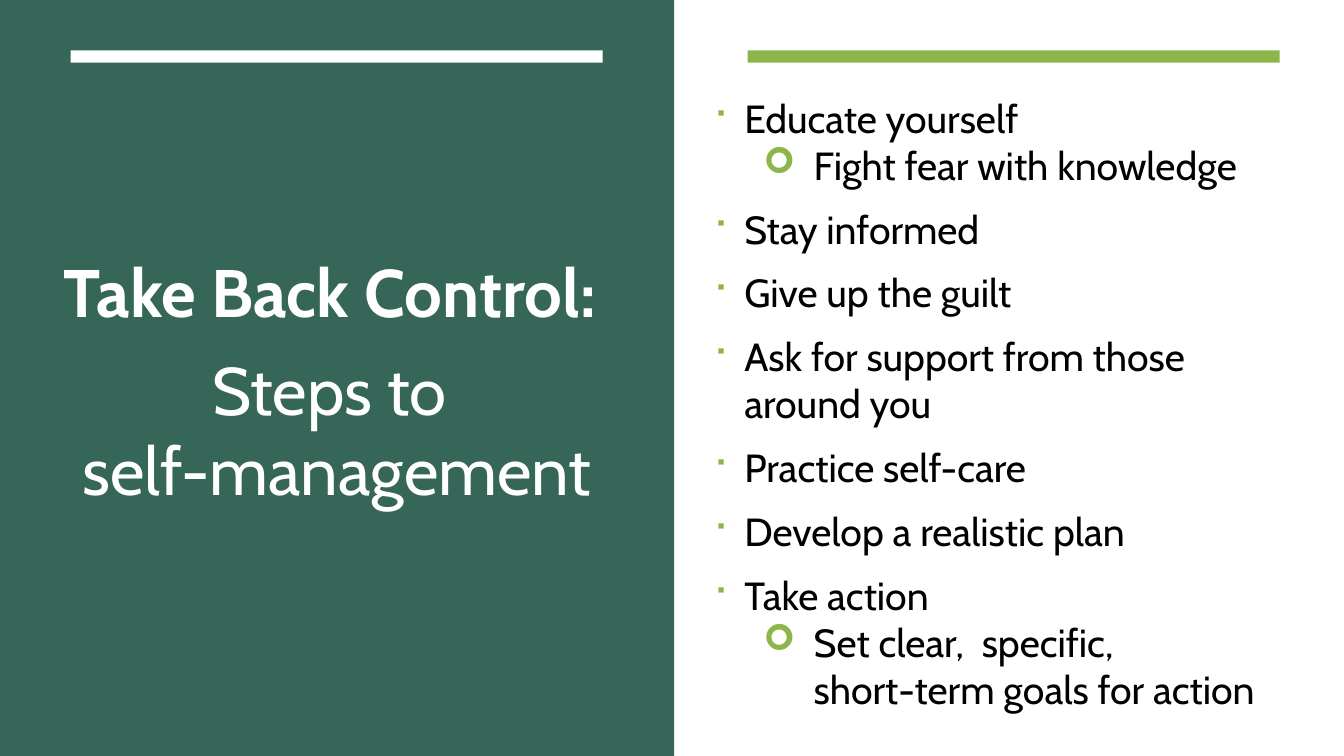
from lxml import etree
from pptx import Presentation
from pptx.dml.color import RGBColor
from pptx.enum import shapes, text
from pptx.oxml import ns
from pptx.util import Pt

WHITE = RGBColor(0xFF, 0xFF, 0xFF)
BLACK = RGBColor(0x00, 0x00, 0x00)
PINE = RGBColor(0x36, 0x66, 0x58)
LEAF = RGBColor(0x8C, 0xB6, 0x4A)

WIDTH, HEIGHT = 960, 540
PANEL_WIDTH = 481.5
BAR_TOP, BAR_WIDTH, BAR_HEIGHT = 36, 380, 8.8

HEADING = [("Take Back Control: ", True, 12), ("Steps to ", False, 0), ("self-management", False, 0)]

# Each step: its text and the sub-points below it
STEPS = [
    ("Educate yourself", ["Fight fear with knowledge"]),
    ("Stay informed", []),
    ("Give up the guilt", []),
    ("Ask for support from those\naround you", []),
    ("Practice self-care", []),
    ("Develop a realistic plan", []),
    ("Take action", ["Set clear,  specific,\nshort-term goals for action"]),
]


class SlideBuilder:
    """Holds the text style and the slide being filled."""

    font = "Cabin"
    # Per list level: bullet, left margin and hanging indent
    bullets = [("■", 22.5, 22.5), ("➢", 72, 36)]

    def __init__(self, slide):
        self.slide = slide
        self.heading = slide.shapes.title
        self.body = slide.placeholders[1]

    def block(self, left, top, width, height, color):
        """Add a plain rectangle behind the placeholders."""
        block = self.slide.shapes.add_shape(
            shapes.MSO_SHAPE.RECTANGLE, Pt(left), Pt(top), Pt(width), Pt(height))
        block.shadow.inherit = False
        block.fill.solid()
        block.fill.fore_color.rgb = color
        block.line.fill.background()
        self.heading._element.addprevious(block._element)

    def place(self, placeholder, left, top, width, height):
        placeholder.left, placeholder.top = Pt(left), Pt(top)
        placeholder.width, placeholder.height = Pt(width), Pt(height)
        frame = placeholder.text_frame
        frame.word_wrap = True
        frame.auto_size = text.MSO_AUTO_SIZE.NONE
        frame.vertical_anchor = text.MSO_ANCHOR.MIDDLE
        return frame

    def set_words(self, paragraph, words, size, color, align, after, bold=False):
        paragraph.text = words
        paragraph.alignment = align
        paragraph.space_before = Pt(0)
        paragraph.space_after = Pt(after)
        for run in paragraph.runs:
            run.font.name = self.font
            run.font.size = Pt(size)
            run.font.bold = bold
            run.font.color.rgb = color

    def bullet(self, paragraph, level):
        char, margin, hang = self.bullets[level]
        paragraph.level = level
        props = paragraph._p.get_or_add_pPr()
        props.set("marL", str(Pt(margin)))
        props.set("indent", str(-Pt(hang)))
        color = etree.SubElement(props, ns.qn("a:buClr"))
        etree.SubElement(color, ns.qn("a:srgbClr"), val=str(LEAF))
        etree.SubElement(props, ns.qn("a:buSzPct"), val="92000")
        etree.SubElement(props, ns.qn("a:buFont"), typeface="Wingdings")
        etree.SubElement(props, ns.qn("a:buChar"), char=char)

    def title(self, lines, *box):
        frame = self.place(self.heading, *box)
        frame.text = "\n".join(words for words, _, _ in lines)
        for paragraph, (words, bold, after) in zip(frame.paragraphs, lines):
            self.set_words(paragraph, words, 48, WHITE, text.PP_ALIGN.CENTER, after, bold)

    def steps(self, steps, *box):
        frame = self.place(self.body, *box)
        items = []
        for step, points in steps:
            items.append((step, 0, 0 if points else 12))
            items += [(point, 1, 12) for point in points]
        for index, (words, level, after) in enumerate(items):
            paragraph = frame.add_paragraph() if index else frame.paragraphs[0]
            self.set_words(paragraph, words, 28, BLACK, text.PP_ALIGN.LEFT, after)
            self.bullet(paragraph, level)


def main():
    deck = Presentation()
    deck.slide_width, deck.slide_height = Pt(WIDTH), Pt(HEIGHT)
    builder = SlideBuilder(deck.slides.add_slide(deck.slide_layouts[1]))

    builder.block(0, 0, WIDTH, HEIGHT, WHITE)
    builder.block(0, 0, PANEL_WIDTH, HEIGHT, PINE)
    for left, color in ((50.5, WHITE), (534, LEAF)):
        builder.block(left, BAR_TOP, BAR_WIDTH, BAR_HEIGHT, color)

    builder.title(HEADING, 15, 81.5, 451.5, 380)
    builder.steps(STEPS, 502, 62, 443.5, 452)
    deck.save("out.pptx")


if __name__ == "__main__":
    main()
